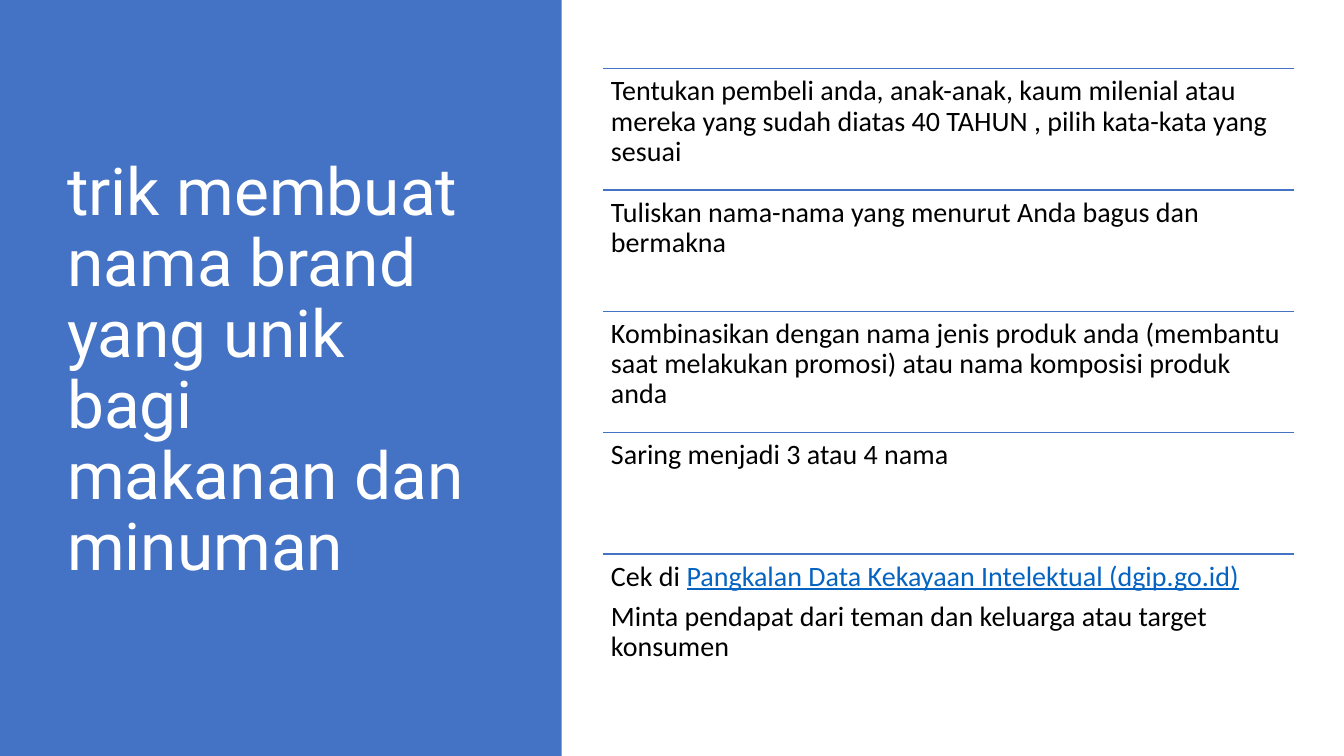
import pptx
import pptx.dml.color
import pptx.enum.shapes
import pptx.enum.text
import pptx.util
import lxml.etree

WIDE, HIGH = 13.33, 7.5
BLUE, WHITE, BLACK, LINK = "4472C4", "FFFFFF", "000000", "0563C1"
TITLE = "trik membuat nama brand yang unik bagi makanan dan minuman"
STEPS = [
    [[("Tentukan pembeli anda, anak-anak, kaum milenial atau mereka yang sudah diatas 40 TAHUN , pilih kata-kata yang sesuai", BLACK)]],
    [[("Tuliskan nama-nama yang menurut Anda bagus dan bermakna", BLACK)]],
    [[("Kombinasikan dengan nama jenis produk anda (membantu saat melakukan promosi) atau nama komposisi produk anda", BLACK)]],
    [[("Saring menjadi 3 atau 4 nama", BLACK)]],
    [[("Cek di ", BLACK), ("Pangkalan Data Kekayaan Intelektual (dgip.go.id)", LINK)],
     [("Minta pendapat dari teman dan keluarga atau target konsumen", BLACK)]],
]

inch = pptx.util.Inches
point = pptx.util.Pt


def color(code):
    return pptx.dml.color.RGBColor.from_string(code)


def write(slide, box, paras, font, size, inset, anchor, after):
    frame = slide.shapes.add_textbox(*map(inch, box)).text_frame
    frame.word_wrap = True
    frame.vertical_anchor = anchor
    frame.margin_left = frame.margin_right = inch(inset[0])
    frame.margin_top = frame.margin_bottom = inch(inset[1])
    for index, parts in enumerate(paras):
        para = frame.add_paragraph() if index else frame.paragraphs[0]
        para.line_spacing = 0.9
        para.space_after = point(after)
        for words, code in parts:
            run = para.add_run()
            run.text = words
            run.font.name = font
            run.font.size = point(size)
            run.font.color.rgb = color(code)
            if code == LINK:
                run.font.underline = True


def rule(slide, left, top, width):
    line = slide.shapes.add_connector(
        pptx.enum.shapes.MSO_CONNECTOR.STRAIGHT,
        inch(left), inch(top), inch(left + width), inch(top))
    line.line.color.rgb = color(BLUE)
    line.line.width = point(1)
    lxml.etree.SubElement(line._element.spPr, pptx.oxml.ns.qn("a:effectLst"))


def panel(slide, box):
    left, top, width, height = box
    rect = slide.shapes.add_shape(
        pptx.enum.shapes.MSO_SHAPE.RECTANGLE, *map(inch, box))
    rect.shadow.inherit = False
    rect.fill.solid()
    rect.fill.fore_color.rgb = color(BLUE)
    rect.line.fill.background()
    area = (left + 0.102 * width, top + 0.09 * height, 0.747 * width, 0.803 * height)
    write(slide, area, [[(TITLE, WHITE)]], "Roboto", 47, (0.1, 0.05),
          pptx.enum.text.MSO_ANCHOR.MIDDLE, 0)


def steps(slide, box):
    left, top, width, height = box
    row = height / len(STEPS)
    for index, paras in enumerate(STEPS):
        edge = top + index * row
        rule(slide, left, edge, width)
        write(slide, (left, edge, width, row), paras, "Calibri", 20, (0.08, 0.08),
              pptx.enum.text.MSO_ANCHOR.TOP, 7)


def main():
    deck = pptx.Presentation()
    deck.slide_width = inch(WIDE)
    deck.slide_height = inch(HIGH)
    slide = deck.slides.add_slide(deck.slide_layouts[6])
    panel(slide, (0, 0, 5.57, HIGH))
    steps(slide, (5.98, 0.68, 6.85, 6.02))
    deck.save("out.pptx")


if __name__ == "__main__":
    main()
